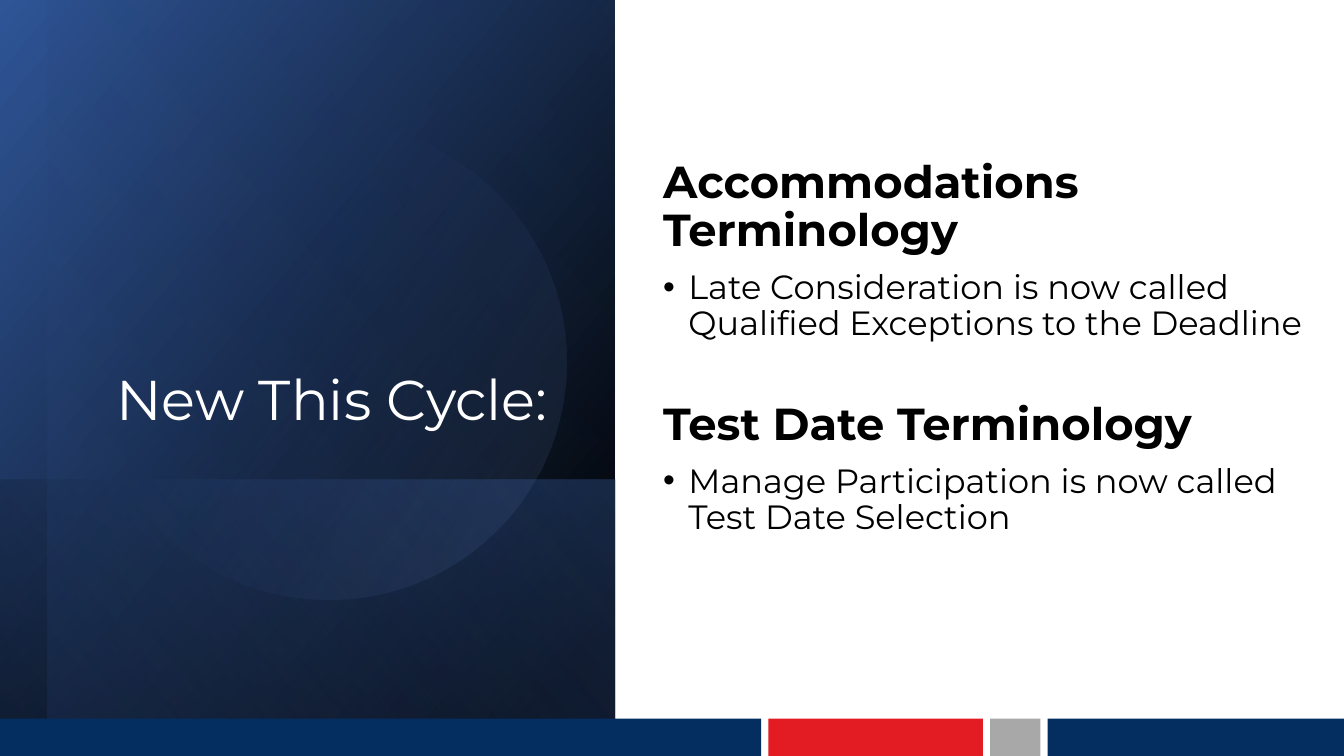
from dataclasses import dataclass

from lxml import etree
from pptx import Presentation
from pptx import util as u
from pptx.dml.color import RGBColor
from pptx.enum import shapes, text
from pptx.oxml.ns import qn


@dataclass(frozen=True)
class Theme:
    font: str = "Montserrat"
    navy: str = "042E60"
    red: str = "E31B23"
    grey: str = "A9A8A8"
    black: str = "000000"
    white: str = "FFFFFF"
    deep_blue: str = "2F5597"
    blue: str = "4472C4"
    pale_blue: str = "8FAADC"
    title: int = 40
    heading: int = 32
    body: int = 24


def add_paragraph(tf, words, *, font, size, color, bold=False, before=0,
                  align=text.PP_ALIGN.LEFT, bullet=False):
    p = tf.paragraphs[0] if not tf.text else tf.add_paragraph()
    p.alignment = align
    p.line_spacing = 0.9
    p.space_before = u.Pt(before)
    if bullet:
        pPr = p._p.get_or_add_pPr()
        pPr.set("marL", str(u.Inches(0.25)))
        pPr.set("indent", str(u.Inches(-0.25)))
        etree.SubElement(pPr, qn("a:buFont")).set("typeface", "Arial")
        etree.SubElement(pPr, qn("a:buChar")).set("char", "•")
    r = p.add_run()
    r.text = words
    r.font.name = font
    r.font.size = u.Pt(size)
    r.font.bold = bold
    r.font.color.rgb = RGBColor.from_string(color)


class Builder:
    """Draws styled elements on the current slide."""

    def __init__(self, prs, theme):
        self.theme = theme
        self.slide = prs.slides.add_slide(prs.slide_layouts[6])

    def shape(self, kind, x, y, w, h):
        sp = self.slide.shapes.add_shape(
            kind, u.Inches(x), u.Inches(y), u.Inches(w), u.Inches(h))
        sp.shadow.inherit = False
        sp.line.fill.background()
        return sp

    def bar(self, x, y, w, h, color):
        sp = self.shape(shapes.MSO_SHAPE.RECTANGLE, x, y, w, h)
        sp.fill.solid()
        sp.fill.fore_color.rgb = RGBColor.from_string(color)

    def gradient(self, sp, stops, angle):
        sp.fill.gradient()
        sp.fill.gradient_angle = 360 - angle
        for stop, (position, color, opacity) in zip(sp.fill.gradient_stops, stops):
            stop.position = position / 100
            stop.color.rgb = RGBColor.from_string(color)
            if opacity < 100:
                clr = stop._gs.find(qn("a:srgbClr"))
                etree.SubElement(clr, qn("a:alpha")).set("val", str(opacity * 1000))

    def panel(self, x, y, w, h, stops, angle):
        sp = self.shape(shapes.MSO_SHAPE.RECTANGLE,
                        x + (w - h) / 2, y + (h - w) / 2, h, w)
        sp.rotation = 90
        sp._element.spPr.xfrm.set("flipH", "1")
        self.gradient(sp, stops, angle)

    def disc(self, x, y, size, rotation, stops, angle):
        sp = self.shape(shapes.MSO_SHAPE.OVAL, x, y, size, size)
        sp.rotation = rotation
        self.gradient(sp, stops, angle)

    def text_frame(self, x, y, w, h, anchor, bottom=0.05):
        sp = self.slide.shapes.add_textbox(
            u.Inches(x), u.Inches(y), u.Inches(w), u.Inches(h))
        tf = sp.text_frame
        tf.word_wrap = True
        tf.vertical_anchor = anchor
        tf.margin_bottom = u.Inches(bottom)
        return tf

    def title(self, words):
        t = self.theme
        tf = self.text_frame(0.9, 0.64, 4.63, 3.7, text.MSO_ANCHOR.BOTTOM)
        add_paragraph(tf, words, font=t.font, size=t.title, color=t.white,
                      align=text.PP_ALIGN.RIGHT)

    def sections(self, sections):
        t = self.theme
        tf = self.text_frame(6.48, 0.64, 6.57, 6.07, text.MSO_ANCHOR.MIDDLE,
                             bottom=0.49)
        for i, (heading, detail) in enumerate(sections):
            add_paragraph(tf, heading, font=t.font, size=t.heading, color=t.black,
                          bold=True, before=42 if i else 10)
            add_paragraph(tf, detail, font=t.font, size=t.body, color=t.black,
                          before=10, bullet=True)


def main():
    prs = Presentation()
    prs.slide_width, prs.slide_height = u.Inches(13.33), u.Inches(7.5)
    t = Theme()
    s = Builder(prs, t)

    s.panel(0, 0, 6.1, 7.5, [(8, t.black, 100), (100, t.deep_blue, 100)], 50)
    s.panel(0, 4.76, 6.1, 2.74, [(2, t.blue, 29), (100, t.black, 30)], 130)
    s.panel(0.47, 0, 5.63, 7.5, [(0, t.black, 0), (99, t.blue, 11)], 130)
    s.disc(0.9, 1.23, 4.72, 101.6, [(39, t.blue, 0), (100, t.pale_blue, 15)], 290)

    s.title("New This Cycle:")
    s.sections([
        ("Accommodations Terminology",
         "Late Consideration is now called Qualified Exceptions to the Deadline"),
        ("Test Date Terminology",
         "Manage Participation is now called Test Date Selection"),
    ])

    x, gap = 0, 0.07
    for width, color in [(7.55, t.navy), (2.13, t.red), (0.5, t.grey), (2.94, t.navy)]:
        s.bar(x, 7.13, width, 0.37, color)
        x += width + gap

    prs.save("out.pptx")


if __name__ == "__main__":
    main()
